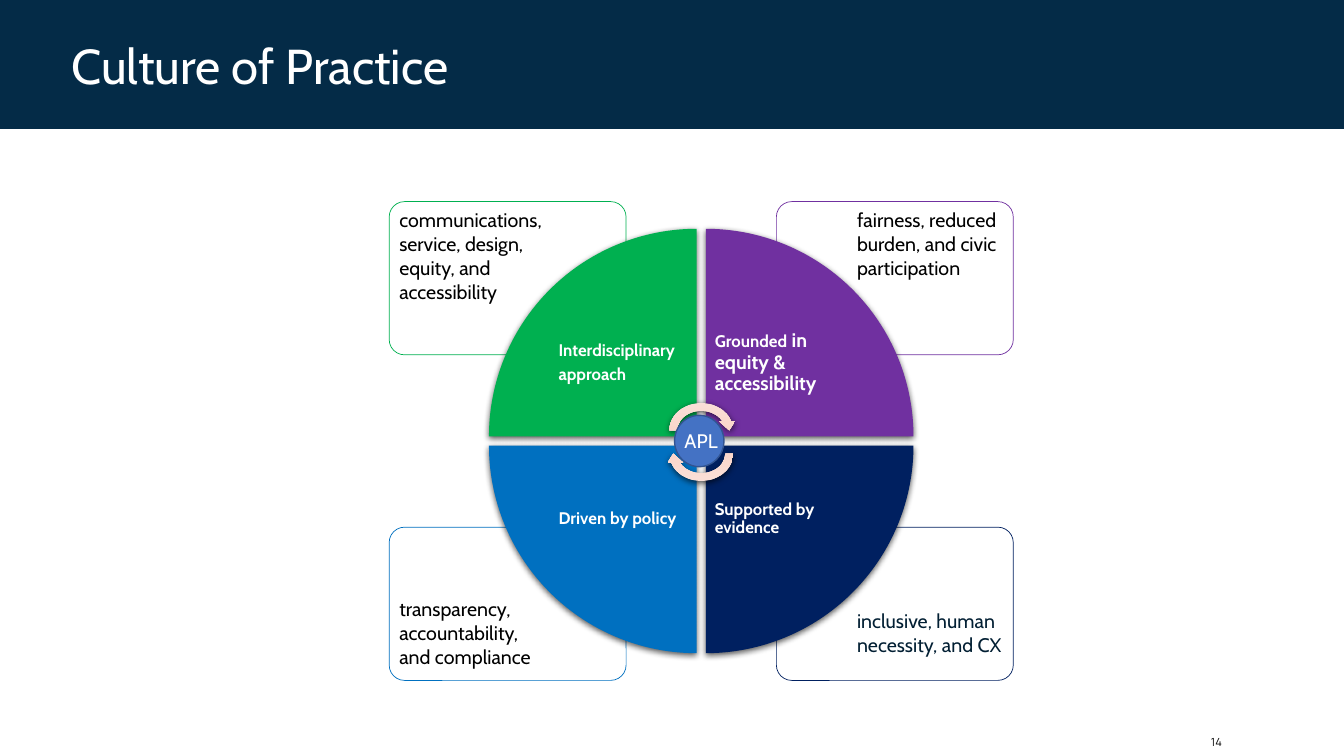
"""Build the Culture of Practice slide: four quadrants around a hub."""
from copy import deepcopy
from dataclasses import dataclass

from lxml import etree
from pptx import Presentation
from pptx.dml.color import RGBColor
from pptx.enum.shapes import MSO_SHAPE as Preset
from pptx.enum.text import MSO_ANCHOR as Anchor, MSO_AUTO_SIZE as AutoSize, PP_ALIGN as Align
from pptx.oxml.ns import qn
from pptx.shapes.autoshape import Shape
from pptx.slide import Slide
from pptx.util import Emu, Pt

EMU_PER_PX = 9144
WHITE = RGBColor(0xFF, 0xFF, 0xFF)
BLACK = RGBColor(0x00, 0x00, 0x00)
BANNER = RGBColor(0x04, 0x2B, 0x47)
INK = RGBColor(0x02, 0x1F, 0x33)
GREEN = RGBColor(0x00, 0xB0, 0x50)
PURPLE = RGBColor(0x70, 0x30, 0xA0)
NAVY = RGBColor(0x00, 0x20, 0x60)
BLUE = RGBColor(0x00, 0x70, 0xC0)
HUB = RGBColor(0x44, 0x72, 0xC4)
HUB_LINE = RGBColor(0x32, 0x54, 0x91)
ARROW_STOPS = (RGBColor(0xFA, 0xE0, 0xD8), RGBColor(0xFA, 0xD6, 0xCB), RGBColor(0xE2, 0xBC, 0xB1))
CARD_X, CARD_Y = (386, 770), (200, 523)
NOTE_X = (390, 844)
WEDGE_X, WEDGE_Y = (485, 700), (227, 442)
LABEL_X, LABEL_Y = (545, 700), (287, 442)


@dataclass(frozen=True)
class Box:
    left: int
    top: int
    width: int
    height: int

    def emu(self) -> tuple[Emu, ...]:
        return tuple(px(n) for n in (self.left, self.top, self.width, self.height))


@dataclass(frozen=True)
class Words:
    text: str
    size: int
    color: RGBColor = WHITE
    bold: bool = False
    font: str = "Cabin"


@dataclass(frozen=True)
class Quadrant:
    column: int
    row: int
    rotation: int
    color: RGBColor
    label: tuple[tuple[Words, ...], ...]
    note: tuple[str, ...]
    note_top: int
    note_color: RGBColor = BLACK


def bold(text: str, size: int = 12) -> Words:
    return Words(text, size, bold=True)


QUADRANTS = (
    Quadrant(1, 1, 180, NAVY, ((bold("Supported by evidence"),),),
             ("inclusive, human", "necessity, and CX"), 601, INK),
    Quadrant(0, 1, 270, BLUE, ((bold("Driven by policy"),),),
             ("transparency,", "accountability,", "and compliance"), 589),
    Quadrant(1, 0, 90, PURPLE, ((bold("Grounded"), bold(" in equity & accessibility", 14)),),
             ("fairness, reduced", "burden, and civic", "participation"), 203),
    Quadrant(0, 0, 0, GREEN, ((bold("Interdisciplinary"),), (bold("approach"),)),
             ("communications,", "service, design,", "equity, and", "accessibility"), 203),
)


def px(length: int) -> Emu:
    return Emu(length * EMU_PER_PX)


def write(shape: Shape, paragraphs: tuple[tuple[Words, ...], ...], insets: tuple[int, int, int, int],
          anchor: Anchor = Anchor.TOP, align: Align = Align.LEFT,
          spacing: float = 1.0, after: int = 0) -> None:
    frame = shape.text_frame
    frame.word_wrap = True
    frame.auto_size = AutoSize.NONE
    frame.vertical_anchor = anchor
    frame.margin_left, frame.margin_top, frame.margin_right, frame.margin_bottom = map(px, insets)
    for index, words in enumerate(paragraphs):
        paragraph = frame.add_paragraph() if index else frame.paragraphs[0]
        paragraph.alignment = align
        paragraph.line_spacing = spacing
        paragraph.space_before = Pt(0)
        paragraph.space_after = Pt(after)
        for piece in words:
            run = paragraph.add_run()
            run.text = piece.text
            run.font.name = piece.font
            run.font.size = Pt(piece.size)
            run.font.bold = piece.bold
            run.font.color.rgb = piece.color


def add_text(slide: Slide, box: Box, *args, **kwargs) -> None:
    write(slide.shapes.add_textbox(*box.emu()), *args, **kwargs)


def add_preset(slide: Slide, preset: Preset, box: Box, fill: RGBColor | None = None,
               line: RGBColor | None = None, line_width: float = 1, rotation: int = 0) -> Shape:
    shape = slide.shapes.add_shape(preset, *box.emu())
    shape.rotation = rotation
    shape.shadow.inherit = False
    if fill is not None:
        shape.fill.solid()
        shape.fill.fore_color.rgb = fill
    if line is None:
        shape.line.fill.background()
    else:
        shape.line.color.rgb = line
        shape.line.width = Pt(line_width)
    return shape


def cast_shadow(shape: Shape) -> None:
    effects = shape.element.spPr.find(qn("a:effectLst"))
    shadow = etree.SubElement(effects, qn("a:outerShdw"), blurRad=str(Pt(4.5)), dist=str(Pt(1.5)),
                              dir="5400000", algn="ctr", rotWithShape="0")
    color = etree.SubElement(shadow, qn("a:srgbClr"), val="000000")
    etree.SubElement(color, qn("a:alpha"), val="63000")


def add_title(slide: Slide) -> None:
    title = slide.shapes.title
    title.left, title.top, title.width, title.height = Box(0, 0, 1334, 128).emu()
    title.fill.solid()
    title.fill.fore_color.rgb = BANNER
    write(title, ((Words("Culture of Practice", 35),),), (71, 7, 7, 7), Anchor.MIDDLE)


def add_card(slide: Slide, quadrant: Quadrant) -> None:
    box = Box(CARD_X[quadrant.column], CARD_Y[quadrant.row], 235, 152)
    card = add_preset(slide, Preset.ROUNDED_RECTANGLE, box, WHITE, quadrant.color, 0.5)
    card.adjustments[0] = 0.1
    lines = tuple((Words(line, 14, quadrant.note_color),) for line in quadrant.note)
    height = 24 * len(lines) + 12
    add_text(slide, Box(NOTE_X[quadrant.column], quadrant.note_top, 158, height), lines,
             (6, 6, 0, 6), spacing=0.9, after=2)


def add_wedge(slide: Slide, quadrant: Quadrant) -> None:
    box = Box(WEDGE_X[quadrant.column], WEDGE_Y[quadrant.row], 206, 206)
    cast_shadow(add_preset(slide, Preset.PIE_WEDGE, box, quadrant.color, rotation=quadrant.rotation))
    add_text(slide, Box(LABEL_X[quadrant.column], LABEL_Y[quadrant.row], 146, 146), quadrant.label,
             (9, 9, 9, 9), Anchor.MIDDLE, spacing=0.9, after=4)


def add_cycle_arrow(slide: Slide, top: int, rotation: int) -> None:
    arrow = add_preset(slide, Preset.CIRCULAR_ARROW, Box(660, top, 71, 62), rotation=rotation)
    arrow.fill.gradient()
    arrow.fill.gradient_angle = 270
    stops = arrow.element.spPr.find(qn("a:gradFill")).find(qn("a:gsLst"))
    stops.insert(1, deepcopy(stops[0]))
    for index, (stop, color) in enumerate(zip(arrow.fill.gradient_stops, ARROW_STOPS)):
        stop.position = index / 2
        stop.color.rgb = color
    cast_shadow(arrow)


def main() -> None:
    presentation = Presentation()
    presentation.slide_width, presentation.slide_height = px(1333), px(750)
    slide = presentation.slides.add_slide(presentation.slide_layouts[5])
    add_title(slide)
    add_text(slide, Box(1136, 722, 83, 28), ((Words("14", 8, BLACK, font="Manrope"),),),
             (7, 3, 7, 3), Anchor.MIDDLE, Align.RIGHT)
    for quadrant in QUADRANTS:
        add_card(slide, quadrant)
    for quadrant in reversed(QUADRANTS):
        add_wedge(slide, quadrant)
    for top, rotation in ((396, 0), (419, 180)):
        add_cycle_arrow(slide, top, rotation)
    add_preset(slide, Preset.OVAL, Box(669, 412, 49, 51), HUB, HUB_LINE)
    add_text(slide, Box(669, 421, 75, 34), ((Words("APL", 14),),), (10, 5, 10, 5))
    presentation.save("out.pptx")


if __name__ == "__main__":
    main()
